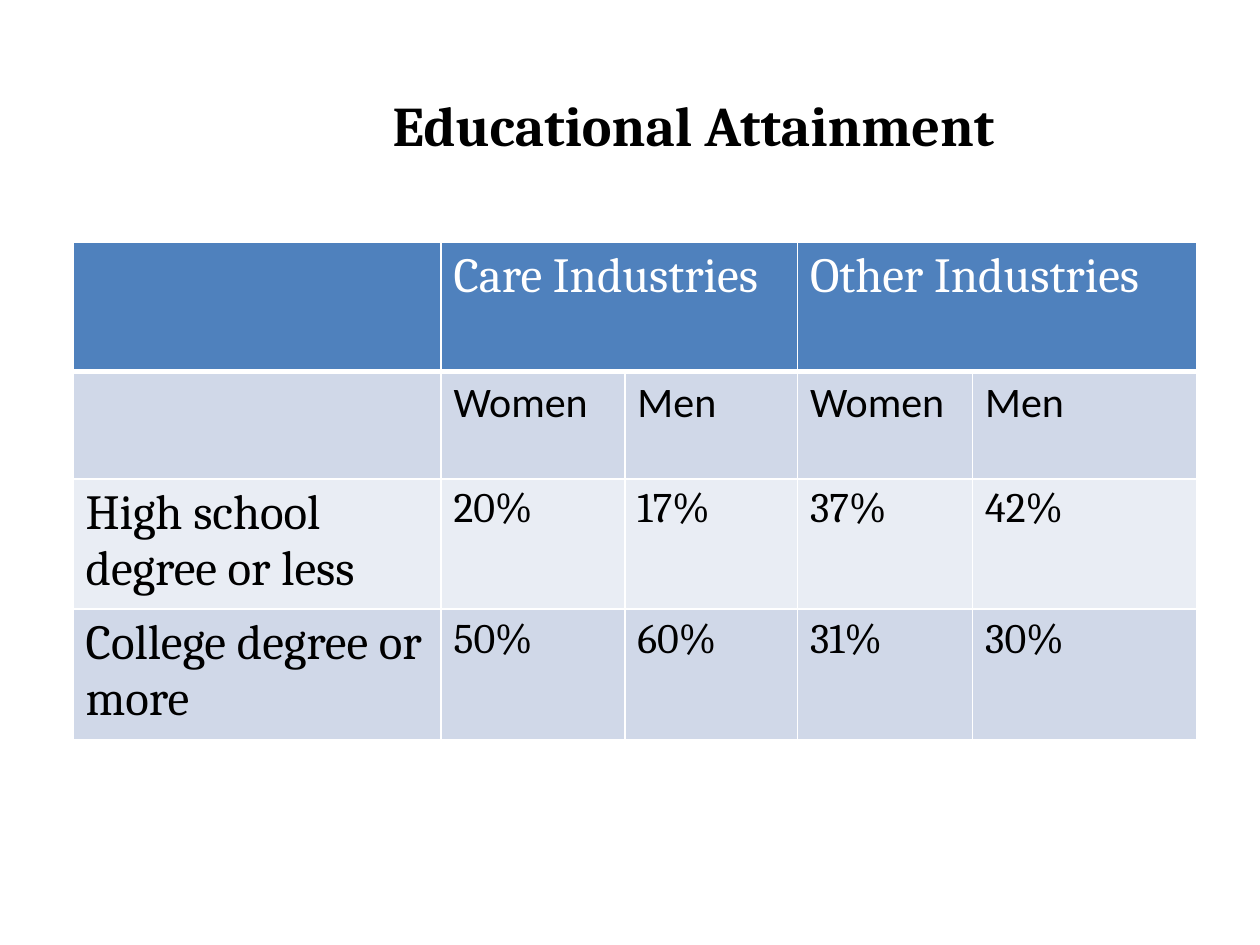
from dataclasses import dataclass

from lxml.etree import SubElement
from pptx import Presentation
from pptx.dml.color import RGBColor
from pptx.enum.text import MSO_AUTO_SIZE, PP_ALIGN
from pptx.oxml.ns import qn
from pptx.util import Inches, Pt


@dataclass(frozen=True)
class Theme:
    black: str = "000000"
    white: str = "FFFFFF"
    header_fill: str = "4F81BD"
    band_fills: tuple = ("D0D8E8", "E9EDF4")
    serif: str = "Cambria"
    sans: str = "Calibri"
    title_size: int = 32
    label_size: int = 28
    value_size: int = 24
    border_width: int = 1
    header_rule_width: int = 3


THEME = Theme()

COLUMN_WIDTHS = (2.92, 1.46, 1.37, 1.39, 1.78)
ROW_HEIGHTS = (1.03, 0.85, 1.03, 1.03)
ROWS = (
    ("", "Care Industries", "", "Other Industries", ""),
    ("", "Women", "Men", "Women", "Men"),
    ("High school degree or less", "20%", "17%", "37%", "42%"),
    ("College degree or more", "50%", "60%", "31%", "30%"),
)


def add_run(paragraph, text, size, font, color, bold=False):
    run = paragraph.add_run()
    run.text = text
    run.font.size = Pt(size)
    run.font.name = font
    run.font.bold = bold
    run.font.color.rgb = RGBColor.from_string(color)


def set_borders(cell, bottom_width):
    properties = cell._tc.get_or_add_tcPr()
    for side in "LRTB":
        width = bottom_width if side == "B" else THEME.border_width
        line = SubElement(properties, qn(f"a:ln{side}"), w=str(Pt(width)))
        fill = SubElement(line, qn("a:solidFill"))
        SubElement(fill, qn("a:srgbClr"), val=THEME.white)


def add_title(slide, left, top, width, height):
    text_frame = slide.shapes.add_textbox(left, top, width, height).text_frame
    text_frame.word_wrap = False
    text_frame.auto_size = MSO_AUTO_SIZE.SHAPE_TO_FIT_TEXT
    paragraph = text_frame.paragraphs[0]
    paragraph.alignment = PP_ALIGN.CENTER
    add_run(paragraph, "Educational Attainment ", THEME.title_size,
            THEME.serif, THEME.black, bold=True)


def fill_cell(cell, text, row, column):
    """Style a cell by its place: header row, subheader row, label or value."""
    is_header = row == 0
    set_borders(cell, THEME.header_rule_width if is_header else THEME.border_width)
    fill_color = THEME.header_fill if is_header else THEME.band_fills[(row - 1) % 2]
    cell.fill.solid()
    cell.fill.fore_color.rgb = RGBColor.from_string(fill_color)
    if text:
        size = THEME.label_size if is_header or column == 0 else THEME.value_size
        font = THEME.sans if row == 1 else THEME.serif
        color = THEME.white if is_header else THEME.black
        add_run(cell.text_frame.paragraphs[0], text, size, font, color)


def add_attainment_table(slide, left, top, width, height):
    table = slide.shapes.add_table(
        len(ROWS), len(COLUMN_WIDTHS), left, top, width, height).table
    for column, column_width in zip(table.columns, COLUMN_WIDTHS):
        column.width = Inches(column_width)
    for row, row_height in zip(table.rows, ROW_HEIGHTS):
        row.height = Inches(row_height)
    for row_index, texts in enumerate(ROWS):
        for column_index, text in enumerate(texts):
            fill_cell(table.cell(row_index, column_index), text,
                      row_index, column_index)
    for first_column in (1, 3):
        table.cell(0, first_column).merge(table.cell(0, first_column + 1))


def main():
    presentation = Presentation()
    presentation.slide_width = Inches(10)
    presentation.slide_height = Inches(7.5)
    slide = presentation.slides.add_slide(presentation.slide_layouts[6])
    add_title(slide, Inches(3), Inches(0.67), Inches(5.11), Inches(0.64))
    add_attainment_table(slide, Inches(0.58), Inches(1.92),
                         Inches(sum(COLUMN_WIDTHS)), Inches(sum(ROW_HEIGHTS)))
    presentation.save("out.pptx")


if __name__ == "__main__":
    main()
